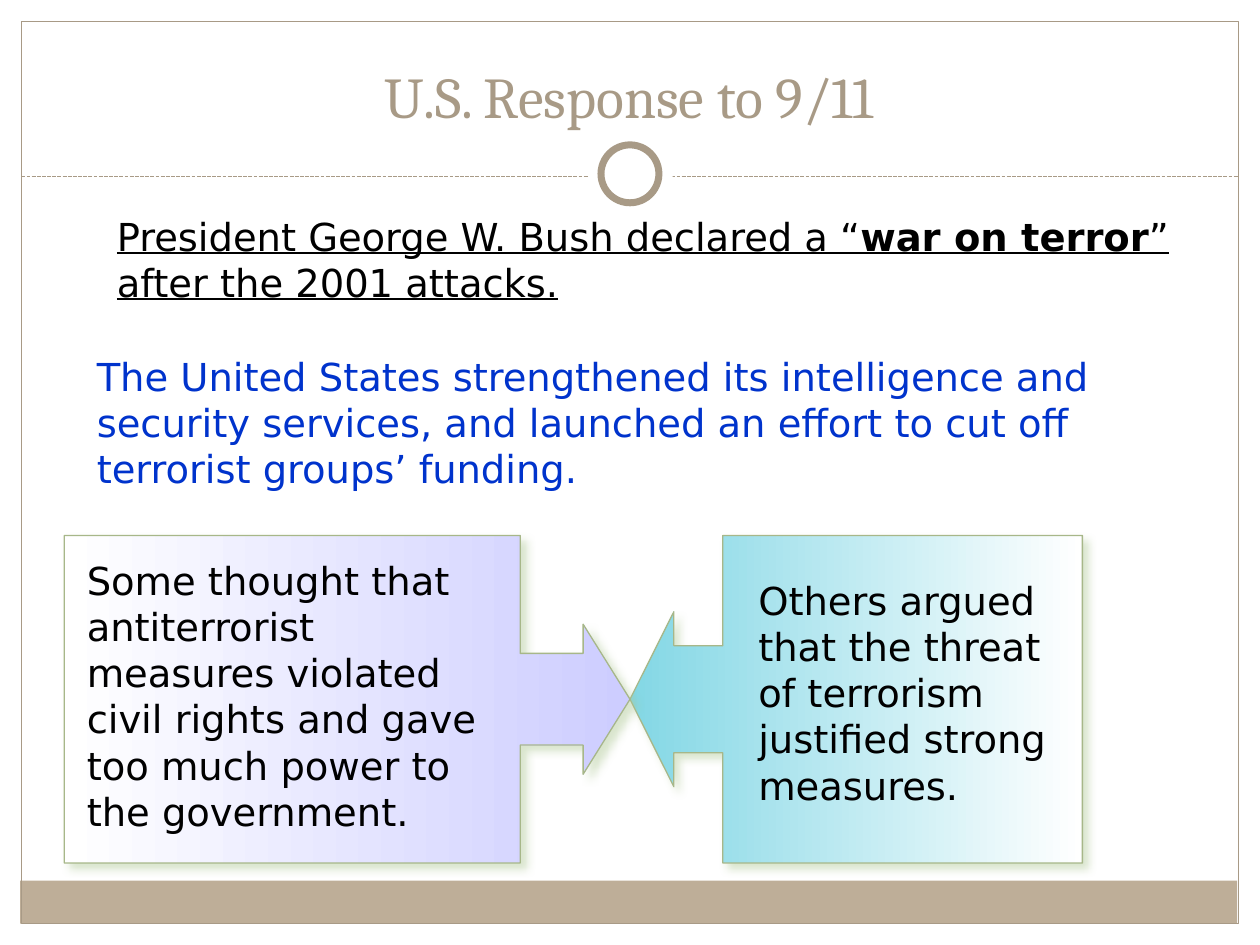
from dataclasses import dataclass

from lxml import etree
from pptx import Presentation
from pptx.dml.color import RGBColor
from pptx.enum.dml import MSO_LINE
from pptx.enum.shapes import MSO_CONNECTOR, MSO_SHAPE
from pptx.enum.text import MSO_ANCHOR, PP_ALIGN
from pptx.oxml.ns import qn
from pptx.util import Inches, Pt

RECT, OVAL = MSO_SHAPE.RECTANGLE, MSO_SHAPE.OVAL
RIGHT, LEFT = MSO_SHAPE.RIGHT_ARROW_CALLOUT, MSO_SHAPE.LEFT_ARROW_CALLOUT
STRAIGHT, DASH = MSO_CONNECTOR.STRAIGHT, MSO_LINE.SQUARE_DOT
TOP, BOTTOM, CENTER = MSO_ANCHOR.TOP, MSO_ANCHOR.BOTTOM, PP_ALIGN.CENTER

COLORS = {
    "white": "FFFFFF", "black": "000000", "tan": "A89A86", "band": "BEAE98",
    "blue": "0033CC", "lilac": "CDCDFF", "aqua": "83D7E5",
    "edge": "A7B789", "shade": "ADC793",
}
Box = tuple[float, float, float, float]


@dataclass
class Note:
    box: Box
    runs: list[tuple[str, bool]]  # words, bold
    color: str = "black"
    size: float = 22
    face: str = "DejaVu Sans"
    under: bool | None = None
    align: PP_ALIGN | None = None
    anchor: MSO_ANCHOR = TOP


@dataclass
class Callout:
    kind: MSO_SHAPE
    box: Box
    adjust: tuple[float, ...]
    stops: tuple[str, str]  # left to right
    note: Note


NOTES = [
    Note((0.33, 0.25, 9.33, 0.83), [("U.S. Response to 9/11", False)], "tan", 33,
         "Cambria", align=CENTER, anchor=BOTTOM),
    Note((0.83, 1.64, 8.83, 0.83),
         [("President George W. Bush declared a “", False),
          ("war on terror", True), ("” after the 2001 attacks.", False)], under=True),
    Note((0.67, 2.75, 8.83, 1.2),
         [("The United States strengthened its intelligence and security services, "
           "and launched an effort to cut off terrorist groups’ funding.", False)], "blue"),
]
CALLOUTS = [
    Callout(LEFT, (5, 4.25, 3.59, 2.6), (0.327, 0.267, 0.134, 0.795), ("aqua", "white"),
            Note((5.92, 4.53, 2.67, 2.3),
                 [("Others argued that the threat of terrorism justified "
                   "strong measures.", False)])),
    Callout(RIGHT, (0.51, 4.25, 4.49, 2.6), (0.28, 0.229, 0.143, 0.806), ("white", "lilac"),
            Note((0.59, 4.37, 3.41, 2.3),
                 [("Some thought that antiterrorist measures violated civil rights "
                   "and gave too much power to the government.", False)])),
]


def rgb(name: str) -> RGBColor:
    return RGBColor.from_string(COLORS[name])


def add_shape(slide, kind: MSO_SHAPE, box: Box, fill: str | None = None,
              line: str | None = None, width: float = 0.75):
    shape = slide.shapes.add_shape(kind, *map(Inches, box))
    shape.shadow.inherit = False
    if fill:
        shape.fill.solid()
        shape.fill.fore_color.rgb = rgb(fill)
    else:
        shape.fill.background()
    if line:
        shape.line.color.rgb = rgb(line)
        shape.line.width = Pt(width)
    else:
        shape.line.fill.background()
    return shape


def add_note(slide, note: Note) -> None:
    frame = slide.shapes.add_textbox(*map(Inches, note.box)).text_frame
    frame.word_wrap = True
    frame.vertical_anchor = note.anchor
    para = frame.paragraphs[0]
    para.alignment = note.align
    font = para.font
    font.name, font.size = note.face, Pt(note.size)
    font.color.rgb = rgb(note.color)
    font.underline = note.under
    for words, bold in note.runs:
        run = para.add_run()
        run.text = words
        if bold:
            run.font.bold = True


def add_shadow(shape) -> None:
    effects = shape._element.spPr.find(qn("a:effectLst"))
    outer = etree.SubElement(effects, qn("a:outerShdw"), blurRad=str(Pt(5)),
                             dist=str(Pt(4.2)), dir="2700000", algn="tl", rotWithShape="0")
    color = etree.SubElement(outer, qn("a:srgbClr"), val=COLORS["shade"])
    etree.SubElement(color, qn("a:alpha"), val="46000")


def add_callout(slide, item: Callout) -> None:
    shape = add_shape(slide, item.kind, item.box, line="edge")
    for i, value in enumerate(item.adjust):
        shape.adjustments[i] = value
    shape.fill.gradient()
    shape.fill.gradient_angle = 0
    for stop, name in zip(shape.fill.gradient_stops, item.stops):
        stop.color.rgb = rgb(name)
    add_shadow(shape)
    add_note(slide, item.note)


def add_frame(slide) -> None:
    add_shape(slide, RECT, (0.16, 6.99, 9.66, 0.34), "band")
    add_shape(slide, RECT, (0.17, 0.17, 9.66, 7.16), line="tan")
    rule = slide.shapes.add_connector(STRAIGHT, *map(Inches, (0.17, 1.4, 9.83, 1.4)))
    rule.line.color.rgb = rgb("tan")
    rule.line.width = Pt(0.75)
    rule.line.dash_style = DASH
    etree.SubElement(rule._element.spPr, qn("a:effectLst"))
    # Ring with a white gap around it
    add_shape(slide, OVAL, (4.67, 1.05, 0.67, 0.67), "white")
    add_shape(slide, OVAL, (4.77, 1.15, 0.46, 0.46), "white", "tan", 4)


def main() -> None:
    deck = Presentation()
    deck.slide_width, deck.slide_height = Inches(10), Inches(7.5)
    slide = deck.slides.add_slide(deck.slide_layouts[6])
    add_frame(slide)
    # Title and statements
    for note in NOTES:
        add_note(slide, note)
    # Opposing views
    for item in CALLOUTS:
        add_callout(slide, item)
    deck.save("out.pptx")


if __name__ == "__main__":
    main()
